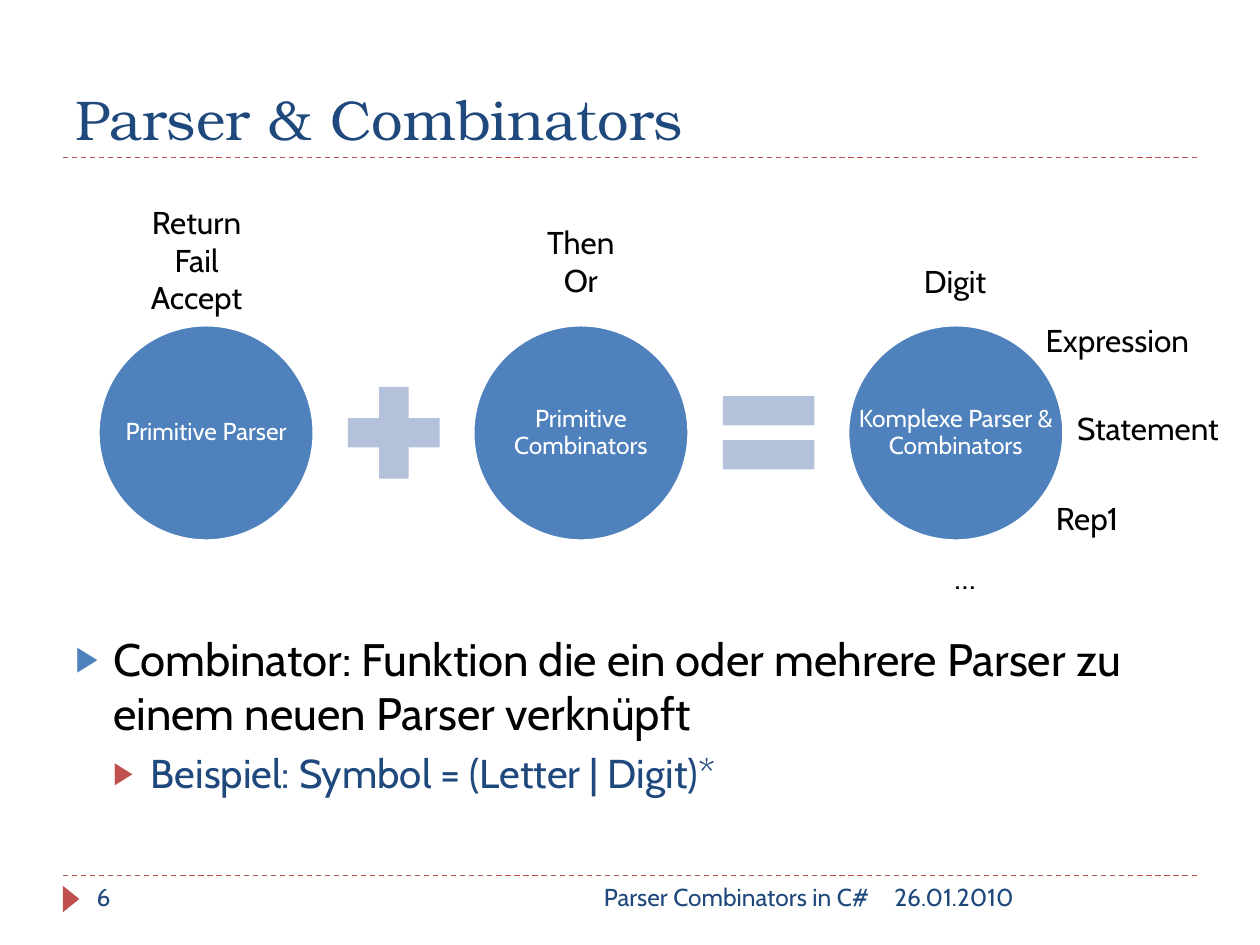
from dataclasses import dataclass
from typing import Any

from lxml.etree import SubElement as Sub
from pptx import Presentation as Deck
from pptx.dml.color import RGBColor as Color
from pptx.enum.dml import MSO_LINE as Dash
from pptx.enum.shapes import MSO_CONNECTOR as Link, MSO_SHAPE as Shape
from pptx.enum.text import MSO_ANCHOR as Anchor, PP_ALIGN as Align
from pptx.oxml.ns import qn
from pptx.util import Pt

HUES = {
    "navy": "1F497D",
    "blue": "4F81BD",
    "pale": "B3C1DB",
    "red": "C0504D",
    "black": "000000",
    "white": "FFFFFF",
}


@dataclass
class Painter:
    slide: Any
    face: str = "Cabin"
    head: str = "TeX Gyre Bonum"

    def hue(self, name):
        return Color.from_string(HUES[name])

    def rule(self, y):
        line = self.slide.shapes.add_connector(
            Link.STRAIGHT, Pt(36), Pt(y), Pt(684), Pt(y))
        line.line.color.rgb = self.hue("red")
        line.line.width = Pt(0.75)
        line.line.dash_style = Dash.DASH
        Sub(line._element.spPr, qn("a:effectLst"))

    def shape(self, kind, box, fill, edge=None, turn=0):
        item = self.slide.shapes.add_shape(kind, *map(Pt, box))
        item.shadow.inherit = False
        item.rotation = turn
        item.fill.solid()
        item.fill.fore_color.rgb = self.hue(fill)
        if edge:
            item.line.color.rgb = self.hue(edge)
            item.line.width = Pt(1.5)
        else:
            item.line.fill.background()

    def style(self, para, size, hue, face=None):
        para.font.name = face or self.face
        para.font.size = Pt(size)
        para.font.color.rgb = self.hue(hue)

    def text(self, box, lines, size=18, hue="black", align=Align.LEFT,
             anchor=Anchor.TOP, face=None, inset=None, space=None):
        frame = self.slide.shapes.add_textbox(*map(Pt, box)).text_frame
        frame.word_wrap = True
        frame.vertical_anchor = anchor
        if inset is not None:
            frame.margin_left = frame.margin_right = Pt(inset)
            frame.margin_top = frame.margin_bottom = Pt(inset)
        frame.text = "\n".join(lines)
        for para in frame.paragraphs:
            para.alignment = align
            para.line_spacing = space
            self.style(para, size, hue, face)
        return frame

    def bullets(self, box, items):
        frame = self.text(box, [item[0] for item in items])
        for level, (para, item) in enumerate(zip(frame.paragraphs, items)):
            words, size, hue, mark = item
            self.style(para, size, hue)
            para.level = level
            if level:
                para.space_before = Pt(5)
            props = para._p.get_or_add_pPr()
            props.set("marL", str(Pt(21.6 * (level + 1))))
            props.set("indent", str(Pt(-21.6)))
            tint = Sub(props, qn("a:buClr"))
            Sub(tint, qn("a:srgbClr"), val=HUES[mark])
            Sub(props, qn("a:buSzPct"), val="76000")
            Sub(props, qn("a:buFont"), typeface=self.face)
            Sub(props, qn("a:buChar"), char="▶")


def main():
    deck = Deck()
    deck.slide_width, deck.slide_height = Pt(720), Pt(540)
    art = Painter(deck.slides.add_slide(deck.slide_layouts[6]))

    for y in (500.4, 90):
        art.rule(y)
    art.shape(Shape.ISOSCELES_TRIANGLE, (33.1, 509, 15.1, 9.4), "red", turn=90)
    art.text((36, 12.2, 648, 77.8), ["Parser & Combinators"], 32, "navy",
             anchor=Anchor.BOTTOM, face=art.head)

    left, top, size, step = 56.2, 185.8, 123.1, 214.2
    names = ["Primitive Parser", "Primitive Combinators",
             "Komplexe Parser & Combinators"]
    for i, name in enumerate(names):
        box = (left + i * step, top, size, size)
        art.shape(Shape.OVAL, box, "blue", "white")
        art.text(box, [name], 14, "white", Align.CENTER, Anchor.MIDDLE,
                 inset=1.5, space=0.9)
    for i, kind in enumerate((Shape.MATH_PLUS, Shape.MATH_EQUAL)):
        art.shape(kind, (left + 133.2 + i * step, 211.7, 71.3, 71.3), "pale")

    labels = [
        (44.6, 112.3, 135.4, ["Return", "Fail", "Accept"], Align.CENTER),
        (264.2, 123.8, 135.4, ["Then", "Or"], Align.CENTER),
        (478.1, 146.2, 135.4, ["Digit"], Align.CENTER),
        (590.4, 180, 112.3, ["Expression"], Align.LEFT),
        (568.1, 230.4, 135.4, ["Statement"], Align.RIGHT),
        (596.2, 281.5, 106.6, ["Rep1"], Align.LEFT),
        (483.8, 315.4, 135.4, ["…"], Align.CENTER),
    ]
    for x, y, width, lines, align in labels:
        art.text((x, y, width, 7.2 + 21.8 * len(lines)), lines, align=align)

    art.bullets((36, 357, 648, 127.5), [
        ("Combinator: Funktion die ein oder mehrere Parser zu einem neuen "
         "Parser verknüpft", 26, "black", "blue"),
        ("Beispiel: Symbol = (Letter | Digit)*", 23, "navy", "red"),
    ])

    notes = [
        (504, 180, "26.01.2010", Align.LEFT),
        (48.2, 156.2, "6", Align.LEFT),
        (228.2, 275.8, "Parser Combinators in C#", Align.RIGHT),
    ]
    for x, width, words, align in notes:
        art.text((x, 500.4, width, 28.8), [words], 14, "navy", align)

    deck.save("out.pptx")


if __name__ == "__main__":
    main()
